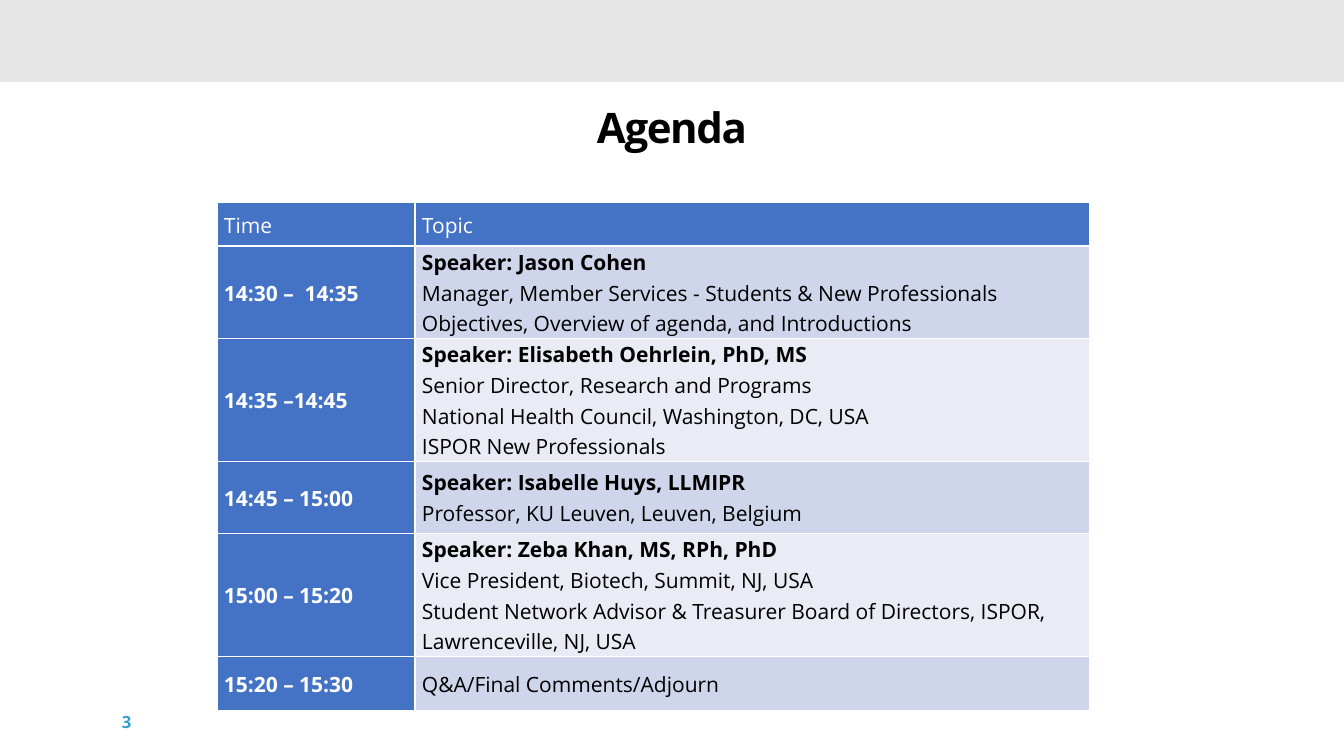
"""Build the agenda slide: a grey band, a title, a timetable and a page number."""
from dataclasses import dataclass

from lxml.etree import SubElement
from pptx import Presentation
from pptx.dml.color import RGBColor
from pptx.enum.shapes import MSO_SHAPE
from pptx.enum.text import MSO_ANCHOR, MSO_AUTO_SIZE, PP_ALIGN
from pptx.oxml.ns import qn
from pptx.util import Emu, Pt

TITLE = "Agenda"
PAGE = "3"
HEAD = ("Time", "Topic")
ROWS = [
    ("14:30 –  14:35", "Speaker: Jason Cohen",
     ["Manager, Member Services - Students & New Professionals",
      "Objectives, Overview of agenda, and Introductions"]),
    ("14:35 –14:45", "Speaker: Elisabeth Oehrlein, PhD, MS",
     ["Senior Director, Research and Programs",
      "National Health Council, Washington, DC, USA",
      "ISPOR New Professionals"]),
    ("14:45 – 15:00", "Speaker: Isabelle Huys, LLMIPR",
     ["Professor, KU Leuven, Leuven, Belgium"]),
    ("15:00 – 15:20", "Speaker: Zeba Khan, MS, RPh, PhD",
     ["Vice President, Biotech, Summit, NJ, USA",
      "Student Network Advisor & Treasurer Board of Directors, ISPOR, "
      "Lawrenceville, NJ, USA"]),
    ("15:20 – 15:30", "", ["Q&A/Final Comments/Adjourn"]),
]
WIDE, HIGH = 1344, 756
BAND = (0, 0, WIDE, 82)
NAME = (574, 95, 196, 54)
FOOT = (112, 702, 109, 40)
GRID = (217, 202)
COLS = (198, 675)
TALL = (44, 92, 123, 72, 123, 55)


@dataclass(frozen=True)
class Theme:
    """Hold the font, colours and type sizes."""
    font: str = "Open Sans"
    ink: str = "000000"
    white: str = "FFFFFF"
    grey: str = "E7E6E6"
    blue: str = "4472C4"
    sky: str = "35A0CE"
    bands: tuple = ("CFD5EA", "E9EBF5")
    big: int = 30
    text: int = 15
    small: int = 12


LOOK = Theme()


def px(n):
    """Turn pixels into EMU."""
    return Emu(round(n * 914400 / 100.8))


def place(shape, box):
    """Move and size a shape."""
    shape.left, shape.top, shape.width, shape.height = map(px, box)


def write(para, text, size, color, bold=False):
    """Add one formatted run."""
    run = para.add_run()
    run.text = text
    font = run.font
    font.name, font.size, font.bold = LOOK.font, Pt(size), bold
    font.color.rgb = RGBColor.from_string(color)
    return run


def edge(cell):
    """Draw thin white borders round a cell."""
    props = cell._tc.get_or_add_tcPr()
    for side in ("lnL", "lnR", "lnT", "lnB"):
        line = SubElement(props, qn(f"a:{side}"), w=str(Pt(1)))
        fill = SubElement(line, qn("a:solidFill"))
        SubElement(fill, qn("a:srgbClr"), val=LOOK.white)


def fill_cell(cell, lines, color, back):
    """Fill a cell with (text, bold) lines."""
    edge(cell)
    cell.fill.solid()
    cell.fill.fore_color.rgb = RGBColor.from_string(back)
    cell.vertical_anchor = MSO_ANCHOR.MIDDLE
    cell.margin_left = cell.margin_right = px(7)
    cell.margin_top = cell.margin_bottom = 0
    frame = cell.text_frame
    for i, (text, bold) in enumerate(lines):
        para = frame.add_paragraph() if i else frame.paragraphs[0]
        para.line_spacing = 1.07
        write(para, text, LOOK.text, color, bold)


def add_band(slide):
    """Add the grey band across the top."""
    band = slide.shapes.add_shape(MSO_SHAPE.RECTANGLE, *map(px, BAND))
    band.shadow.inherit = False
    band.fill.solid()
    band.fill.fore_color.rgb = RGBColor.from_string(LOOK.grey)
    band.line.fill.background()


def add_title(slide):
    """Format the title placeholder."""
    title = slide.shapes.title
    place(title, NAME)
    frame = title.text_frame
    frame.auto_size = MSO_AUTO_SIZE.NONE
    frame.vertical_anchor = MSO_ANCHOR.TOP
    frame.margin_top = px(9)
    frame.margin_bottom = 0
    para = frame.paragraphs[0]
    para.alignment = PP_ALIGN.CENTER
    para.line_spacing = Pt(34)
    run = write(para, TITLE, LOOK.big, LOOK.ink, True)
    run._r.get_or_add_rPr().set("spc", "-100")


def add_grid(slide):
    """Add the timetable."""
    size = (sum(COLS), sum(TALL))
    table = slide.shapes.add_table(
        len(TALL), len(COLS), *map(px, GRID + size)).table
    table.horz_banding = False
    for col, width in zip(table.columns, COLS):
        col.width = px(width)
    for row, height in zip(table.rows, TALL):
        row.height = px(height)
    for i, text in enumerate(HEAD):
        fill_cell(table.cell(0, i), [(text, False)], LOOK.white, LOOK.blue)
    for i, (time, who, notes) in enumerate(ROWS):
        lines = [(who, True)] if who else []
        lines += [(note, False) for note in notes]
        fill_cell(table.cell(i + 1, 0), [(time, True)], LOOK.white, LOOK.blue)
        fill_cell(table.cell(i + 1, 1), lines, LOOK.ink, LOOK.bands[i % 2])


def add_page(slide):
    """Add the page number."""
    frame = slide.shapes.add_textbox(*map(px, FOOT)).text_frame
    frame.word_wrap = True
    frame.vertical_anchor = MSO_ANCHOR.MIDDLE
    write(frame.paragraphs[0], PAGE, LOOK.small, LOOK.sky, True)


def main():
    """Build and save the deck."""
    deck = Presentation()
    deck.slide_width, deck.slide_height = px(WIDE), px(HIGH)
    slide = deck.slides.add_slide(deck.slide_layouts[5])
    for add in (add_band, add_title, add_grid, add_page):
        add(slide)
    deck.save("out.pptx")


if __name__ == "__main__":
    main()
